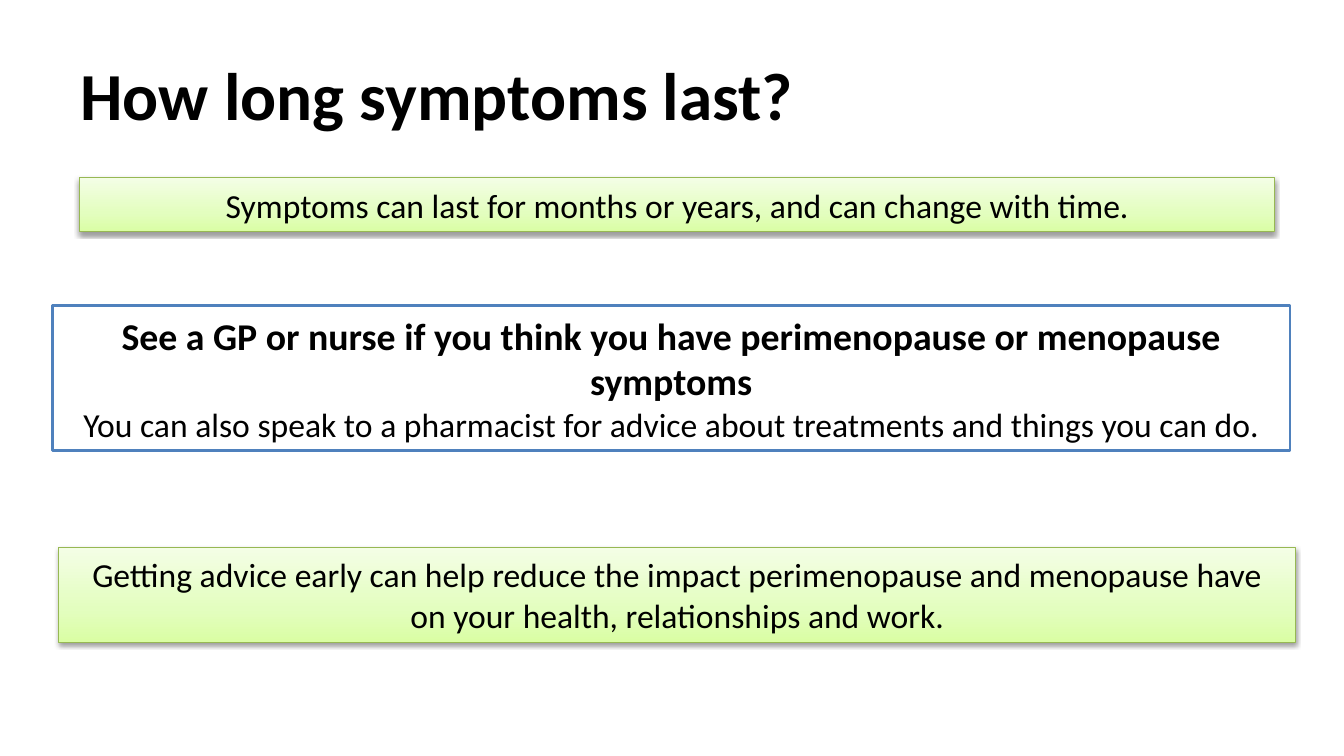
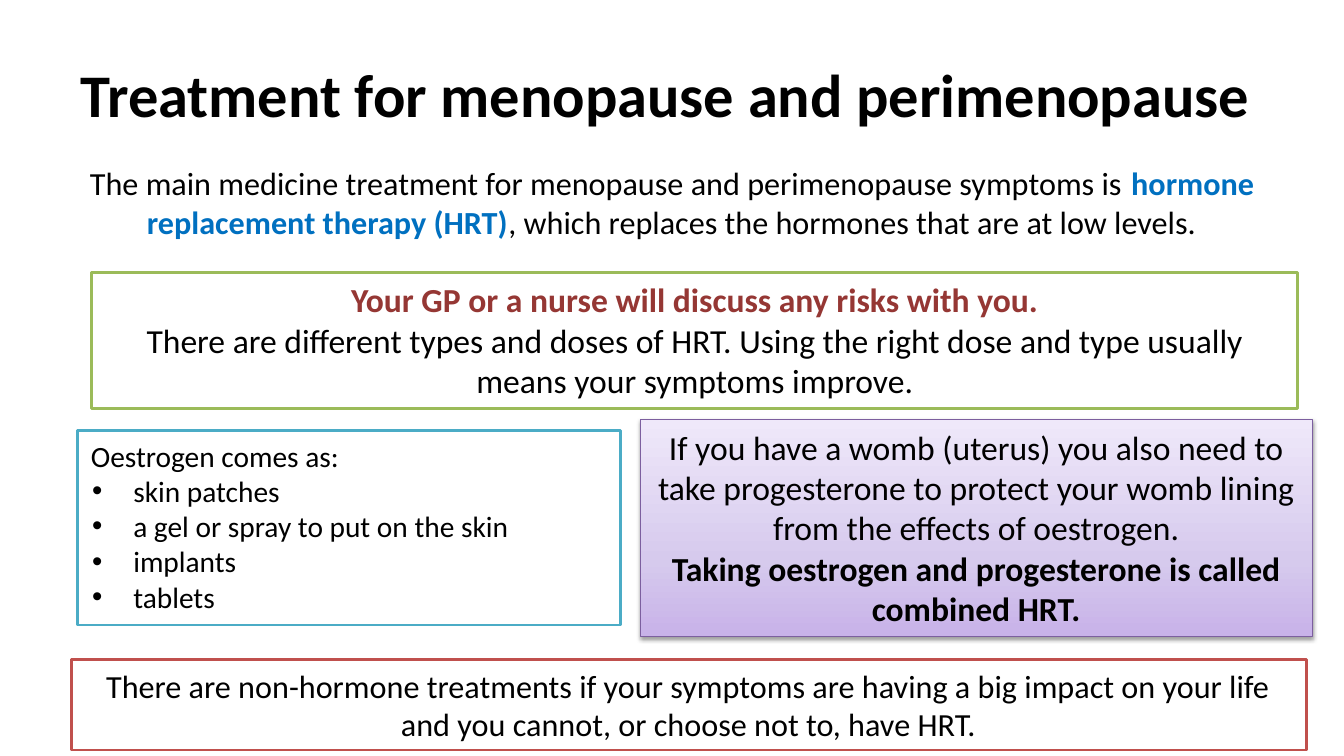
import pptx
import pptx.dml.color
import pptx.enum.shapes
import pptx.enum.text
import pptx.oxml
import pptx.oxml.ns
import pptx.util
from pptx.util import Cm

RGBColor = pptx.dml.color.RGBColor
BLACK = RGBColor(0x00, 0x00, 0x00)
WHITE = RGBColor(0xFF, 0xFF, 0xFF)
BLUE = RGBColor(0x4F, 0x81, 0xBD)
LINK_BLUE = RGBColor(0x00, 0x70, 0xC0)
GREEN = RGBColor(0x9B, 0xBB, 0x59)
DARK_GREEN = RGBColor(0x97, 0xB8, 0x53)
TEAL = RGBColor(0x4B, 0xAC, 0xC6)
RED = RGBColor(0xC0, 0x50, 0x4D)
DARK_RED = RGBColor(0x95, 0x37, 0x34)
PURPLE = RGBColor(0x7C, 0x5F, 0x9F)

# Gradient colours from bottom to top, at 0, 35 and 100 percent
GREEN_SHADES = (RGBColor(0xDA, 0xFE, 0xA4), RGBColor(0xE3, 0xFE, 0xBF),
                RGBColor(0xF4, 0xFE, 0xE6))
PURPLE_SHADES = (RGBColor(0xC8, 0xB2, 0xE9), RGBColor(0xD6, 0xCA, 0xED),
                 RGBColor(0xEF, 0xE8, 0xFA))

CENTER = pptx.enum.text.PP_ALIGN.CENTER
LEFT = pptx.enum.text.PP_ALIGN.LEFT
TOP = pptx.enum.text.MSO_ANCHOR.TOP
MIDDLE = pptx.enum.text.MSO_ANCHOR.MIDDLE


def make_drawing_element(tag, content=""):
    namespace = pptx.oxml.ns.nsdecls("a")
    return pptx.oxml.parse_xml(f"<a:{tag} {namespace}>{content}</a:{tag}>")


class SlideBuilder:
    """Holds the shared style and the current slide."""

    font = "Calibri"
    side_inset, edge_inset = Cm(0.33), Cm(0.18)
    title_place = (Cm(1.7), Cm(0.76), Cm(30.48), Cm(3.18))

    def __init__(self, deck):
        self.deck = deck
        self.slide = None

    def add_slide(self, title, size):
        self.slide = self.deck.slides.add_slide(self.deck.slide_layouts[5])
        holder = self.slide.shapes.title
        holder.left, holder.top, holder.width, holder.height = self.title_place
        self.set_text(holder, [[(title, size, True)]], LEFT, MIDDLE)

    def add_run(self, para, text, size, bold=False, color=BLACK):
        span = para.add_run()
        span.text = text
        span.font.name = self.font
        span.font.size = pptx.util.Pt(size)
        span.font.bold = bold
        span.font.color.rgb = color

    def set_text(self, shape, paragraphs, alignment=CENTER, anchor=TOP):
        """Each paragraph is a list of runs: (text, size, bold, color)."""
        frame = shape.text_frame
        frame.word_wrap = True
        frame.auto_size = pptx.enum.text.MSO_AUTO_SIZE.NONE
        frame.vertical_anchor = anchor
        frame.margin_left = frame.margin_right = self.side_inset
        frame.margin_top = frame.margin_bottom = self.edge_inset
        for index, runs in enumerate(paragraphs):
            para = frame.add_paragraph() if index else frame.paragraphs[0]
            para.alignment = alignment
            for run in runs:
                self.add_run(para, *run)
        return frame

    def add_text(self, place, paragraphs):
        box = self.slide.shapes.add_textbox(*place)
        self.set_text(box, paragraphs)

    def add_rectangle(self, place, line_color, line_width):
        rectangle = pptx.enum.shapes.MSO_SHAPE.RECTANGLE
        box = self.slide.shapes.add_shape(rectangle, *place)
        box.shadow.inherit = False
        box.line.color.rgb = line_color
        box.line.width = pptx.util.Pt(line_width)
        return box

    def add_outlined_box(self, place, line_color, paragraphs, **layout):
        box = self.add_rectangle(place, line_color, 2)
        box.fill.solid()
        box.fill.fore_color.rgb = WHITE
        return self.set_text(box, paragraphs, **layout)

    def add_gradient_box(self, place, line_color, shades, paragraphs):
        box = self.add_rectangle(place, line_color, 0.75)
        box.fill.gradient()
        properties = box._element.spPr
        # Three-stop gradient running upwards
        gradient = properties.find(pptx.oxml.ns.qn("a:gradFill"))
        for child in list(gradient):
            gradient.remove(child)
        stops = "".join(
            f'<a:gs pos="{percent * 1000}"><a:srgbClr val="{shade}"/></a:gs>'
            for percent, shade in zip((0, 35, 100), shades))
        gradient.append(make_drawing_element("gsLst", stops))
        direction = make_drawing_element("lin")
        direction.set("ang", str(270 * 60000))
        direction.set("scaled", "0")
        gradient.append(direction)
        # Soft shadow below the box
        shadow = make_drawing_element(
            "outerShdw",
            '<a:srgbClr val="000000"><a:alpha val="38000"/></a:srgbClr>')
        for name, value in (("blurRad", pptx.util.Pt(3.1)),
                            ("dist", pptx.util.Pt(1.6)),
                            ("dir", 90 * 60000), ("rotWithShape", 0)):
            shadow.set(name, str(int(value)))
        properties.find(pptx.oxml.ns.qn("a:effectLst")).append(shadow)
        self.set_text(box, paragraphs)

    def add_bullet_box(self, place, line_color, heading, items, size):
        lines = [[(text, size)] for text in (heading, *items)]
        frame = self.add_outlined_box(place, line_color, lines, alignment=LEFT)
        for para in frame.paragraphs[1:]:
            properties = para._p.get_or_add_pPr()
            properties.set("marL", str(int(Cm(1.07))))
            properties.set("indent", str(-int(Cm(1.04))))
            bullet_font = make_drawing_element("buFont")
            bullet_font.set("typeface", "Arial")
            bullet = make_drawing_element("buChar")
            bullet.set("char", "•")
            properties.extend([bullet_font, bullet])


def add_duration_slide(builder):
    builder.add_slide("How long symptoms last?", 48)
    builder.add_gradient_box(
        (Cm(2.01), Cm(4.47), Cm(30.12), Cm(1.37)), DARK_GREEN, GREEN_SHADES,
        [[("Symptoms can last for months or years, and can change with time.",
           24)]])
    builder.add_outlined_box(
        (Cm(1.32), Cm(7.7), Cm(31.19), Cm(3.66)), BLUE,
        [[("See a GP or nurse if you think you have perimenopause or "
           "menopause symptoms", 27, True)],
         [("You can also speak to a pharmacist for advice about treatments "
           "and things you can do.", 24)]])
    builder.add_gradient_box(
        (Cm(1.47), Cm(13.79), Cm(31.19), Cm(2.39)), DARK_GREEN, GREEN_SHADES,
        [[("Getting advice early can help reduce the impact perimenopause "
           "and menopause have on your health, relationships and work.", 24)]])


def add_treatment_slide(builder):
    builder.add_slide("Treatment for menopause and perimenopause", 43.2)
    builder.add_text(
        (Cm(1.7), Cm(3.94), Cm(30.48), Cm(2.41)),
        [[("The main medicine treatment for menopause and perimenopause "
           "symptoms is ", 23),
          ("hormone replacement therapy (HRT)", 23, True, LINK_BLUE),
          (", which replaces the hormones that are at low levels.", 23)]])
    # Risks and doses
    builder.add_outlined_box(
        (Cm(2.31), Cm(6.86), Cm(30.4), Cm(3.43)), GREEN,
        [[("Your GP or a nurse will discuss any risks with you.",
           24, True, DARK_RED)],
         [("There are different types and doses of HRT. Using the right dose "
           "and type usually means your symptoms improve.", 24)]])
    # The two hormones
    builder.add_bullet_box(
        (Cm(1.96), Cm(10.85), Cm(13.67), Cm(4.9)), TEAL,
        "Oestrogen comes as:",
        ("skin patches", "a gel or spray to put on the skin", "implants",
         "tablets"), 21)
    builder.add_gradient_box(
        (Cm(16.13), Cm(10.57), Cm(16.94), Cm(5.46)), PURPLE, PURPLE_SHADES,
        [[("If you have a womb (uterus) you also need to take progesterone "
           "to protect your womb lining from the effects of oestrogen.", 24)],
         [("Taking oestrogen and progesterone is called combined HRT.",
           24, True)]])
    # Alternatives
    builder.add_outlined_box(
        (Cm(1.8), Cm(16.61), Cm(31.12), Cm(2.29)), RED,
        [[("There are non-hormone treatments if your symptoms are having a "
           "big impact on your life and you cannot, or choose not to, "
           "have HRT.", 23)]], anchor=MIDDLE)


def main():
    deck = pptx.Presentation()
    deck.slide_width, deck.slide_height = Cm(33.87), Cm(19.05)
    builder = SlideBuilder(deck)
    add_duration_slide(builder)
    add_treatment_slide(builder)
    deck.save("out.pptx")


if __name__ == "__main__":
    main()
